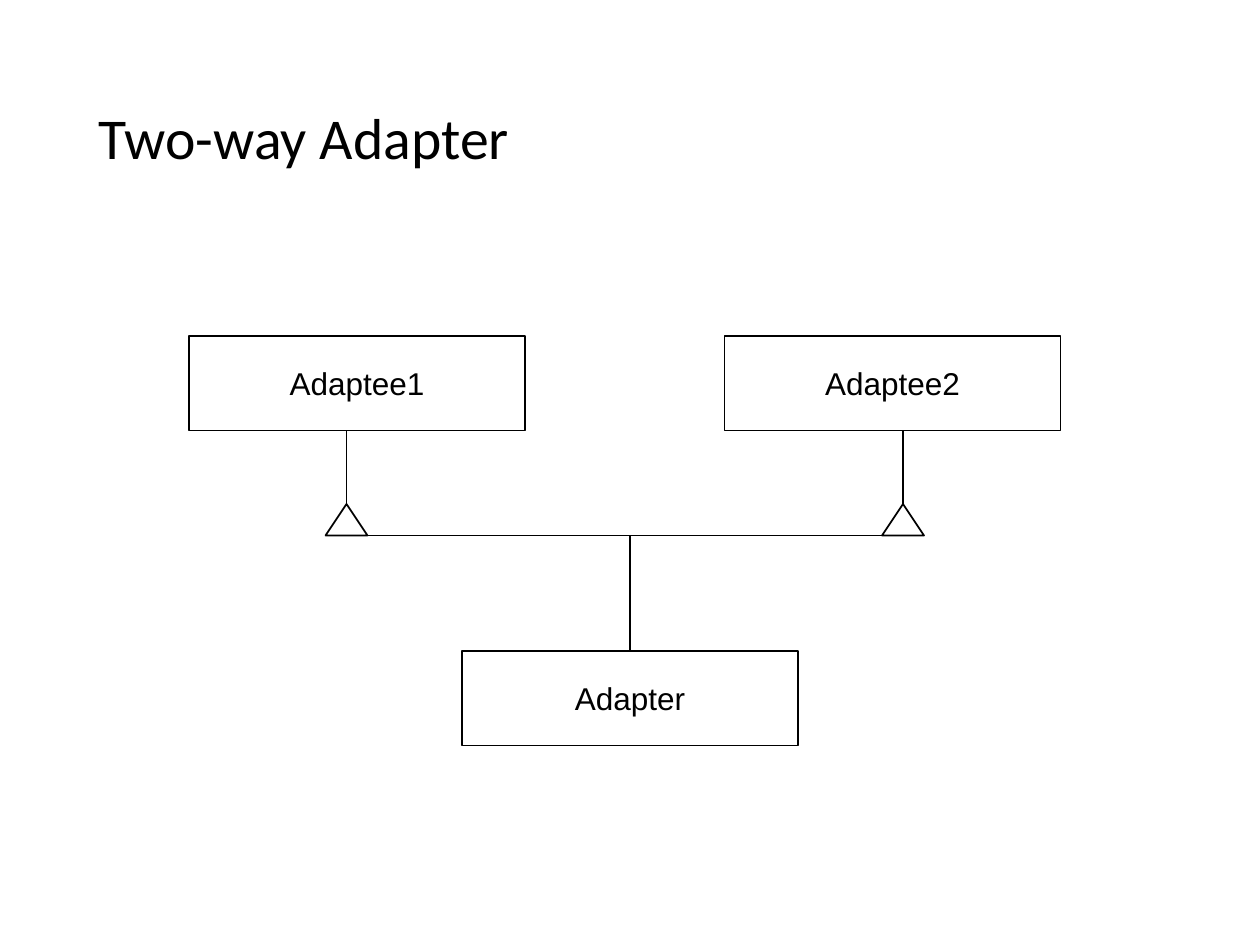
from lxml.etree import SubElement
from pptx import Presentation
from pptx.dml.color import RGBColor
from pptx.enum.shapes import MSO_CONNECTOR, MSO_SHAPE
from pptx.enum.text import MSO_ANCHOR, PP_ALIGN
from pptx.oxml.ns import qn
from pptx.util import Emu, Pt

PX = 9525  # EMU per px, 96 px to the inch
COLORS = {"ink": "000000", "paper": "FFFFFF"}


def px(*lengths):
    return [Emu(n * PX) for n in lengths]


def rgb(name):
    return RGBColor.from_string(COLORS[name])


def write(tf, text, size, font, align=PP_ALIGN.LEFT, spacing=None, wrap=True):
    tf.word_wrap = wrap
    tf.vertical_anchor = MSO_ANCHOR.MIDDLE
    p = tf.paragraphs[0]
    p.alignment = align
    p.line_spacing = spacing
    r = p.add_run()
    r.text = text
    r.font.size = Pt(size)
    r.font.name = font
    r.font.color.rgb = rgb("ink")


class Diagram:
    def __init__(self, s, line_width=1):
        self.s = s
        self.line_width = Pt(line_width)

    def outline(self, line):
        line.color.rgb = rgb("ink")
        line.width = self.line_width

    def title(self, text, x, y, w, h):
        box = self.s.shapes.add_textbox(*px(x, y, w, h))
        write(box.text_frame, text, 33, "Calibri", spacing=0.9)

    def shape(self, kind, x, y, w, h):
        sp = self.s.shapes.add_shape(kind, *px(x, y, w, h))
        sp.shadow.inherit = False
        sp.fill.solid()
        sp.fill.fore_color.rgb = rgb("paper")
        self.outline(sp.line)
        return sp

    def class_box(self, name, x, y, w=256, h=72):
        sp = self.shape(MSO_SHAPE.RECTANGLE, x, y, w, h)
        write(sp.text_frame, name, 18, "Arial", align=PP_ALIGN.CENTER, wrap=False)

    def line(self, x1, y1, x2, y2):
        cx = self.s.shapes.add_connector(MSO_CONNECTOR.STRAIGHT, *px(x1, y1, x2, y2))
        self.outline(cx.line)
        SubElement(cx._element.spPr, qn("a:effectLst"))

    def inheritance(self, x, base, w=32, h=24):
        """Draw a triangle centred on x, standing on base."""
        self.shape(MSO_SHAPE.ISOSCELES_TRIANGLE, x - w // 2, base - h, w, h)


def main():
    prs = Presentation()
    prs.slide_width, prs.slide_height = px(960, 720)
    d = Diagram(prs.slides.add_slide(prs.slide_layouts[6]))

    parent_bottom, bus_y, adapter_y = 328, 408, 496
    branches = (264, 688)

    d.title("Two-way Adapter", 66, 38, 828, 139)
    d.class_box("Adapter", 352, adapter_y)
    for name, x in (("Adaptee1", 144), ("Adaptee2", 552)):
        d.class_box(name, x, 256)

    for x in branches:
        d.line(x, parent_bottom, x, bus_y)
    d.line(480, adapter_y, 480, bus_y)
    d.line(branches[0], bus_y, branches[1], bus_y)
    for x in branches:
        d.inheritance(x, bus_y)

    prs.save("out.pptx")


if __name__ == "__main__":
    main()
